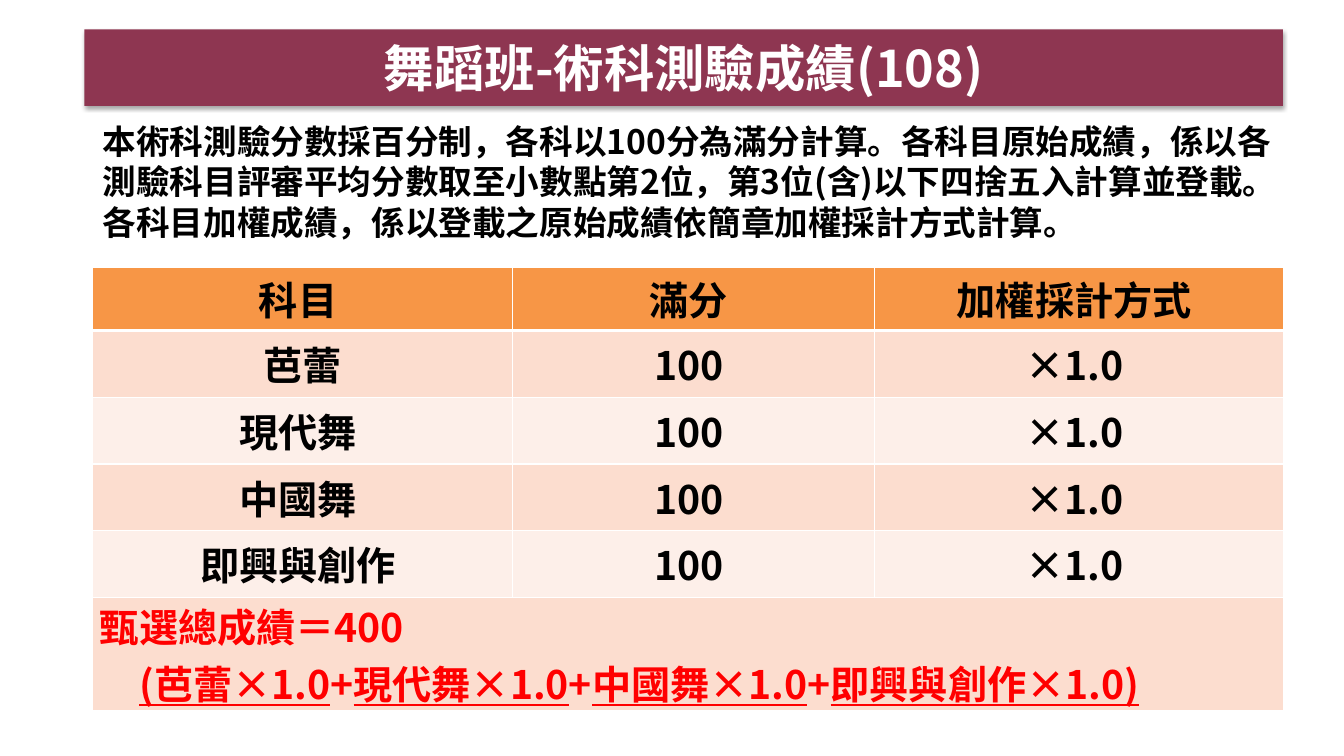
import pptx
import pptx.chart
import pptx.dml.color
import pptx.enum.text
import pptx.enum.shapes
import pptx.oxml
import pptx.oxml.ns
import pptx.util
from pptx.util import Cm

FONT = "Noto Sans CJK SC"
ALIGN = pptx.enum.text.PP_ALIGN
MIDDLE = pptx.enum.text.MSO_ANCHOR.MIDDLE
NS = pptx.oxml.ns.nsdecls("a")
TITLE = "舞蹈班-術科測驗成績(108)"
NOTE = (
    "本術科測驗分數採百分制，各科以100分為滿分計算。"
    "各科目原始成績，係以各測驗科目評審平均分數取至小數點第2位，"
    "第3位(含)以下四捨五入計算並登載。"
    "各科目加權成績，係以登載之原始成績依簡章加權採計方式計算。"
)
HEADS = ["科目 ", "滿分 ", "加權採計方式 "]
DANCES = ["芭蕾", "現代舞 ", "中國舞 ", "即興與創作 "]
TOTAL = "甄選總成績＝400"
TERMS = ["(芭蕾×1.0", "現代舞×1.0", "中國舞×1.0", "即興與創作×1.0)"]
WIDTHS = [10.57, 9.12, 10.31]
HEIGHTS = [1.6] + [1.68] * 4 + [2.77]


def color(code):
    return pptx.dml.color.RGBColor.from_string(code)


def paint(target, code):
    target.fill.solid()
    target.fill.fore_color.rgb = color(code)


def style(para, size, code, align=ALIGN.LEFT):
    para.alignment = align
    for run in para.runs:
        font = run.font
        font.name = FONT
        font.size = pptx.util.Pt(size)
        font.bold = True
        font.color.rgb = color(code)
        east = pptx.oxml.parse_xml(f'<a:ea {NS} typeface="{FONT}"/>')
        font._element.find(pptx.oxml.ns.qn("a:latin")).addnext(east)


def add_bar(slide):
    bar = slide.shapes.add_shape(
        pptx.enum.shapes.MSO_SHAPE.RECTANGLE, Cm(2.13), Cm(0.74), Cm(30.2), Cm(1.93)
    )
    paint(bar, "8E3651")
    bar.line.fill.background()
    bar.shadow.inherit = False
    glow = pptx.oxml.parse_xml(
        f'<a:outerShdw {NS} blurRad="39370" dist="22860" dir="5400000" rotWithShape="0">'
        '<a:srgbClr val="000000"><a:alpha val="35000"/></a:srgbClr></a:outerShdw>'
    )
    bar._element.spPr.find(pptx.oxml.ns.qn("a:effectLst")).append(glow)
    frame = bar.text_frame
    frame.text = TITLE
    frame.vertical_anchor = MIDDLE
    style(frame.paragraphs[0], 36, "FFFFFF", ALIGN.CENTER)


def add_note(slide):
    box = slide.shapes.add_textbox(Cm(2.34), Cm(2.92), Cm(30.4), Cm(3.33))
    frame = box.text_frame
    frame.word_wrap = True
    frame.auto_size = pptx.enum.text.MSO_AUTO_SIZE.SHAPE_TO_FIT_TEXT
    frame.text = NOTE
    style(frame.paragraphs[0], 24, "000000")


def add_edges(cell, top, bottom):
    edges = [("L", 1), ("R", 1), ("T", top), ("B", bottom)]
    props = cell._tc.get_or_add_tcPr()
    for spot, (side, width) in enumerate(edges):
        line = pptx.oxml.parse_xml(
            f'<a:ln{side} {NS} w="{width * 12700}"><a:solidFill>'
            f'<a:srgbClr val="FFFFFF"/></a:solidFill></a:ln{side}>'
        )
        props.insert(spot, line)


def shape_cell(cell, row):
    cell.margin_left = cell.margin_right = Cm(0.18)
    cell.margin_top = cell.margin_bottom = 0
    cell.vertical_anchor = MIDDLE
    band = "FCDDCF" if row % 2 else "FDEFE9"
    paint(cell, band if row else "F79646")
    add_edges(cell, 3 if row == 1 else 1, 1 if row else 3)


def fill_total(cell):
    frame = cell.text_frame
    frame.text = TOTAL
    style(frame.paragraphs[0], 28, "FF0000")
    para = frame.add_paragraph()
    for spot, term in enumerate(TERMS):
        if spot:
            para.add_run().text = "+"
        run = para.add_run()
        run.text = term
        run.font.underline = True
    style(para, 28, "FF0000")
    props = para._p.get_or_add_pPr()
    props.set("marL", str(Cm(0.99)))
    props.set("indent", "0")


def add_scores(slide):
    rows = [HEADS] + [[dance, "100 ", "×1.0 "] for dance in DANCES]
    table = slide.shapes.add_table(
        len(HEIGHTS), len(WIDTHS), Cm(2.34), Cm(6.73), Cm(sum(WIDTHS)), Cm(sum(HEIGHTS))
    ).table
    for column, width in zip(table.columns, WIDTHS):
        column.width = Cm(width)
    for row, height in enumerate(HEIGHTS):
        table.rows[row].height = Cm(height)
        for cell in table.rows[row].cells:
            shape_cell(cell, row)
    for row, words in enumerate(rows):
        for col, word in enumerate(words):
            frame = table.cell(row, col).text_frame
            frame.text = word
            style(frame.paragraphs[0], 28, "000000", ALIGN.CENTER)
    last = len(rows)
    table.cell(last, 0).merge(table.cell(last, len(WIDTHS) - 1))
    fill_total(table.cell(last, 0))


def main():
    deck = pptx.Presentation()
    deck.slide_width = Cm(33.87)
    deck.slide_height = Cm(19.05)
    slide = deck.slides.add_slide(deck.slide_layouts[6])
    add_scores(slide)
    add_bar(slide)
    add_note(slide)
    deck.save("out.pptx")


if __name__ == "__main__":
    main()
